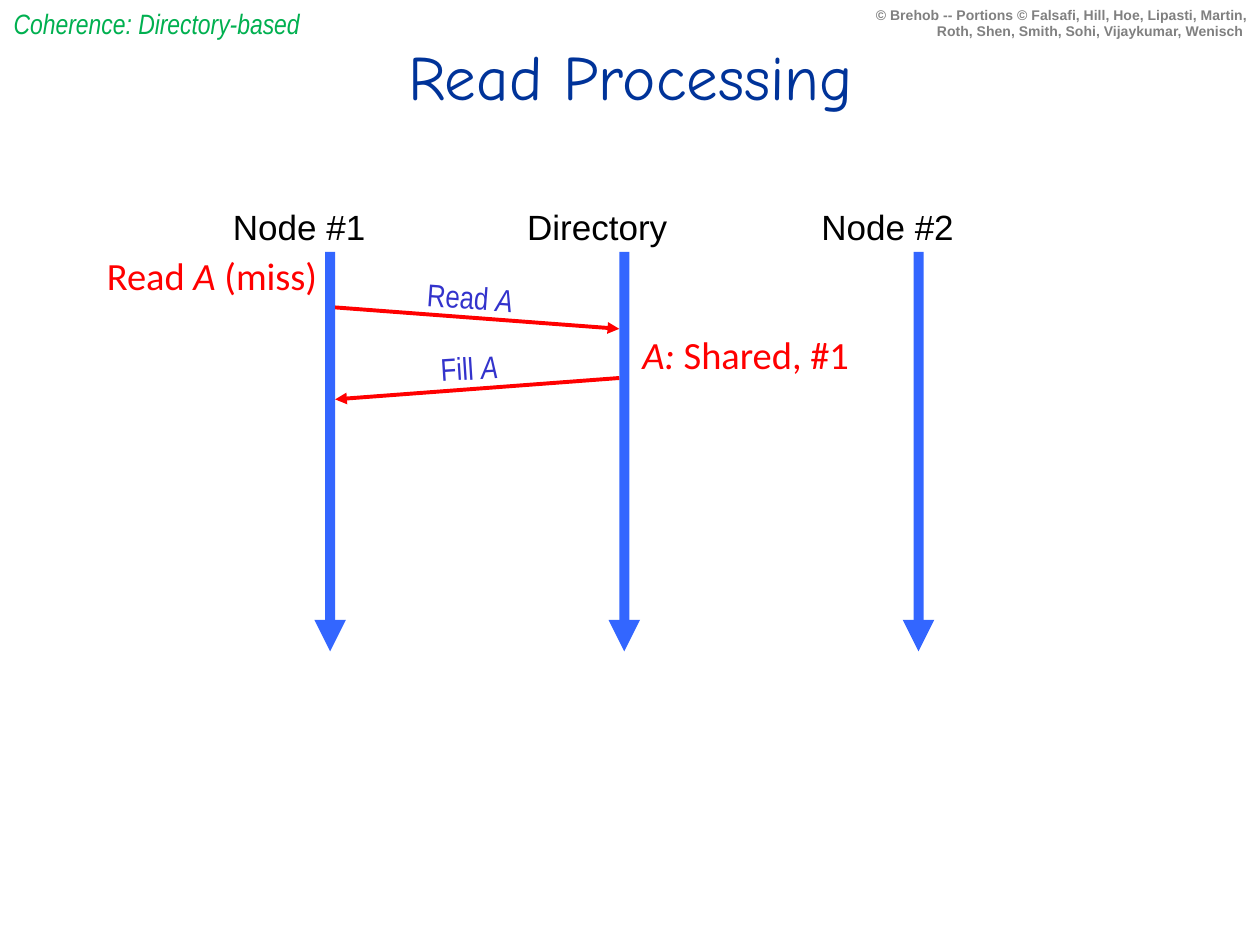
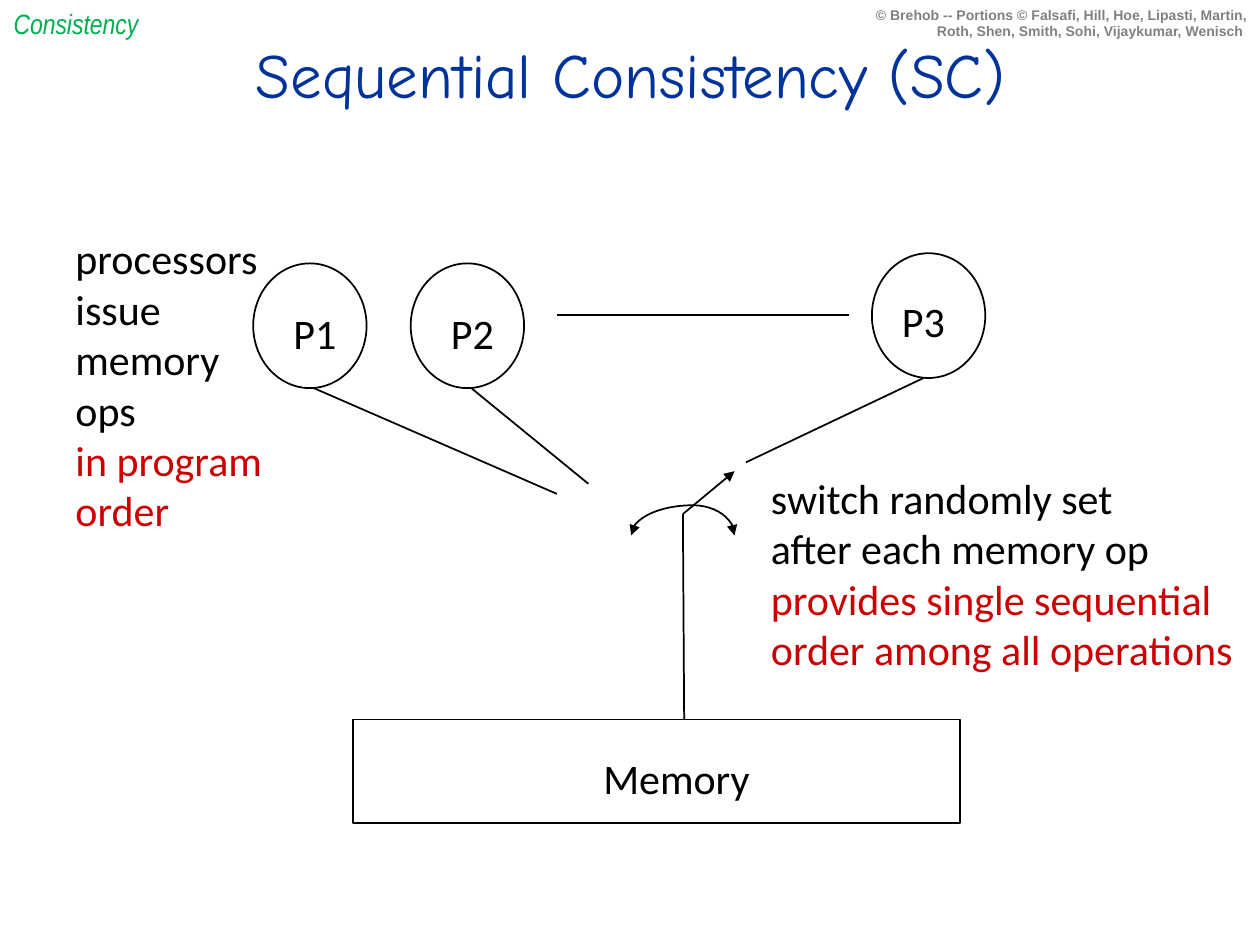
from pptx import Presentation
from pptx.dml.color import RGBColor
from pptx.enum.shapes import MSO_CONNECTOR, MSO_SHAPE
from pptx.enum.text import MSO_ANCHOR, MSO_AUTO_SIZE, PP_ALIGN
from pptx.oxml.ns import qn
from pptx.util import Inches, Pt
from lxml import etree

LEFT, CENTER, RIGHT = PP_ALIGN.LEFT, PP_ALIGN.CENTER, PP_ALIGN.RIGHT
TOP, MIDDLE = MSO_ANCHOR.TOP, MSO_ANCHOR.MIDDLE
GROW = MSO_AUTO_SIZE.SHAPE_TO_FIT_TEXT
RECT, OVAL, ARC = MSO_SHAPE.RECTANGLE, MSO_SHAPE.OVAL, MSO_SHAPE.ARC
STRAIGHT = MSO_CONNECTOR.STRAIGHT

# Shared look
W, H = 10, 7.5
BLACK, WHITE, RED, DARK_RED = "000000", "FFFFFF", "FF0000", "CC0000"
NAVY, BLUE, INDIGO, GREEN, GRAY = "003399", "3366FF", "3333CC", "00B050", "808080"
# style: font, size, colour, bold
CREDIT_STYLE = ("Arial", 8, GRAY, True)
TITLE_STYLE = ("Comic Neue", 36, NAVY, False)
TOPIC_STYLE = ("Arial Narrow", 16, GREEN, False)
LANE_STYLE = ("Arial", 20, BLACK, False)
STATE_STYLE = ("Calibri", 22, RED, False)
MESSAGE_STYLE = ("Arial Narrow", 18, INDIGO, False)
BODY_STYLE = ("Calibri", 24, BLACK, False)
EMPHASIS_STYLE = ("Calibri", 24, DARK_RED, False)
CREDIT = ("© Brehob -- Portions © Falsafi, Hill, Hoe, Lipasti, Martin, "
          "Roth, Shen, Smith, Sohi, Vijaykumar, Wenisch ")

# Read Processing: a paragraph is a list of (text, italic) runs
LANES = ["Node #1", "Directory", "Node #2"]
LANE_X, LANE_STEP, LANE_TOP, LANE_LEN, BAR_W = 2.62, 2.335, 2, 3, 0.08
STATES = [  # runs, box
    ([("Read ", False), ("A", True), (" (miss)", False)], (0.75, 1.95, 2, 0.47)),
    ([("A:", True), (" Shared, #1", False)], (5, 2.58, 2.25, 0.47)),
]
MESSAGES = [  # verb, from lane, to lane, start y, label box, label angle
    ("Read ", 0, 1, 2.44, (3.29, 2.19, 0.89, 0.37), 4.3),
    ("Fill ", 1, 0, 3, (3.4, 2.75, 0.66, 0.37), 356.3),
]
MESSAGE_DROP = 0.17

# Sequential Consistency
CPU_W, CPU_H = 0.9, 0.99
CPUS = [  # name, circle left and top, label left and top, far end of its line
    ("P1", (2.01, 2.09), (2.23, 2.39), (4.42, 3.92)),
    ("P2", (3.26, 2.09), (3.48, 2.39), (4.67, 3.84)),
    ("P3", (6.92, 2.01), (7.06, 2.3), (5.92, 3.67)),
]
MEMORY = (2.8, 5.71, 4.82, 0.82)
PIVOT = (5.42, 4.08)
SWING_X, SWING_Y, SWING_H = 5.5, 4.25, 0.24
SWINGS = [  # horizontal radius, start and end angle, arrow end
    (0.33, 270, 0, "tailEnd"),
    (0.49, 180, 270, "headEnd"),
]
ISSUE_NOTE = [("processors", BODY_STYLE), ("issue memory ops", BODY_STYLE),
              ("in program order", EMPHASIS_STYLE)]
SWITCH_NOTE = [("switch randomly set", BODY_STYLE),
               ("after each memory op", BODY_STYLE),
               ("provides single sequential", EMPHASIS_STYLE),
               ("order among all operations", EMPHASIS_STYLE)]


# Helpers
def rgb(hex_colour):
    return RGBColor.from_string(hex_colour)


def inches(values):
    return [Inches(v) for v in values]


def add_run(p, text, style, italic=False):
    name, size, colour, bold = style
    r = p.add_run()
    r.text = text
    r.font.name, r.font.size = name, Pt(size)
    r.font.bold, r.font.italic = bold, italic
    r.font.color.rgb = rgb(colour)


def add_text(slide, box, paragraphs, align=LEFT, wrap=True, anchor=TOP,
             auto_size=GROW, spacing=None):
    """Each paragraph is a list of (text, style, italic) runs."""
    sp = slide.shapes.add_textbox(*inches(box))
    tf = sp.text_frame
    tf.word_wrap, tf.auto_size, tf.vertical_anchor = wrap, auto_size, anchor
    for i, runs in enumerate(paragraphs):
        p = tf.paragraphs[0] if i == 0 else tf.add_paragraph()
        p.alignment = align
        if spacing:
            p.line_spacing = spacing
        for run in runs:
            add_run(p, *run)
    return sp


def add_arrowhead(sp, end):
    ln = sp._element.spPr.find(qn("a:ln"))
    etree.SubElement(ln, qn("a:" + end)).set("type", "triangle")


def add_line(slide, start, end, colour=BLACK, width=1, arrow=False):
    line = slide.shapes.add_connector(STRAIGHT, *inches(start + end))
    line.line.color.rgb = rgb(colour)
    line.line.width = Pt(width)
    if arrow:
        add_arrowhead(line, "tailEnd")
    etree.SubElement(line._element.spPr, qn("a:effectLst"))


def add_shape(slide, kind, box, fill=None, line=None):
    sp = slide.shapes.add_shape(kind, *inches(box))
    sp.shadow.inherit = False
    if fill:
        sp.fill.solid()
        sp.fill.fore_color.rgb = rgb(fill)
    else:
        sp.fill.background()
    if line:
        sp.line.color.rgb = rgb(line)
        sp.line.width = Pt(1)
    else:
        sp.line.fill.background()
    return sp


def new_slide(prs, title, topic, topic_w, title_anchor):
    slide = prs.slides.add_slide(prs.slide_layouts[6])
    add_text(slide, (6.83, 0, W - 6.83, 0.37), [[(CREDIT, CREDIT_STYLE)]], RIGHT)
    add_text(slide, (0.38, 0.25, 9.25, 0.67), [[(title, TITLE_STYLE)]], CENTER,
             anchor=title_anchor, auto_size=MSO_AUTO_SIZE.NONE)
    add_text(slide, (0.01, 0, topic_w, 0.37), [[(topic, TOPIC_STYLE, True)]],
             wrap=False)
    return slide


def build_read_processing(prs):
    slide = new_slide(prs, "Read Processing", "Coherence: Directory-based", 2.49, TOP)
    lane_x = [LANE_X + i * LANE_STEP for i in range(len(LANES))]

    # Lanes
    for name, x in zip(LANES, lane_x):
        add_text(slide, (x - 0.87, 1.58, 1.75, 0.43), [[(name, LANE_STYLE)]])
        add_shape(slide, RECT, (x - BAR_W / 2, LANE_TOP, BAR_W, LANE_LEN), BLUE)
        bottom = LANE_TOP + LANE_LEN
        add_line(slide, (x, bottom - 0.08), (x, bottom + 0.17), BLUE, 6, True)

    # Messages between lanes
    for verb, source, target, y, box, angle in MESSAGES:
        side = BAR_W / 2 if target > source else -BAR_W / 2
        add_line(slide, (lane_x[source] + side, y),
                 (lane_x[target] - side, y + MESSAGE_DROP), RED, 2.25, True)
        runs = [(verb, MESSAGE_STYLE), ("A", MESSAGE_STYLE, True)]
        label = add_text(slide, box, [runs], wrap=False, spacing=0.9)
        label.rotation = angle

    # Node and directory states
    for runs, box in STATES:
        add_text(slide, box, [[(text, STATE_STYLE, it) for text, it in runs]])


def build_sequential_consistency(prs):
    slide = new_slide(prs, "Sequential Consistency (SC)", "Consistency", 1.2, MIDDLE)
    add_text(slide, (6.02, 3.7, 3.9, 1.71), [[run] for run in SWITCH_NOTE], wrap=False)
    add_text(slide, (0.5, 1.8, 1.68, 2.93), [[run] for run in ISSUE_NOTE])

    # Processors and their lines to the switch
    for name, (x, y), label_at, far_end in CPUS:
        add_shape(slide, OVAL, (x, y, CPU_W, CPU_H), WHITE, BLACK)
        add_text(slide, label_at + (0.54, 0.5), [[(name, BODY_STYLE)]], wrap=False)
        shift = 0.03 if far_end[0] > x else -0.04
        add_line(slide, (x + CPU_W / 2 + shift, y + CPU_H), far_end)
    add_line(slide, (4.42, 2.5), (6.74, 2.5))

    # Memory
    add_shape(slide, RECT, MEMORY, WHITE, BLACK)
    add_text(slide, (4.69, 5.92, 1.37, 0.5), [[("Memory", BODY_STYLE)]], wrap=False)

    # Switch
    add_line(slide, (5.43, MEMORY[1]), PIVOT)
    add_line(slide, PIVOT, (5.83, 3.74), arrow=True)
    for radius, start, end, arrow_end in SWINGS:
        box = (SWING_X - radius, SWING_Y - SWING_H, 2 * radius, 2 * SWING_H)
        arc = add_shape(slide, ARC, box, line=BLACK)
        # Angles are stored in 60000ths of a degree, scaled by 100000
        arc.adjustments[0], arc.adjustments[1] = start * 0.6, end * 0.6
        add_arrowhead(arc, arrow_end)


def main():
    prs = Presentation()
    prs.slide_width, prs.slide_height = Inches(W), Inches(H)
    build_read_processing(prs)
    build_sequential_consistency(prs)
    prs.save("out.pptx")


if __name__ == "__main__":
    main()
